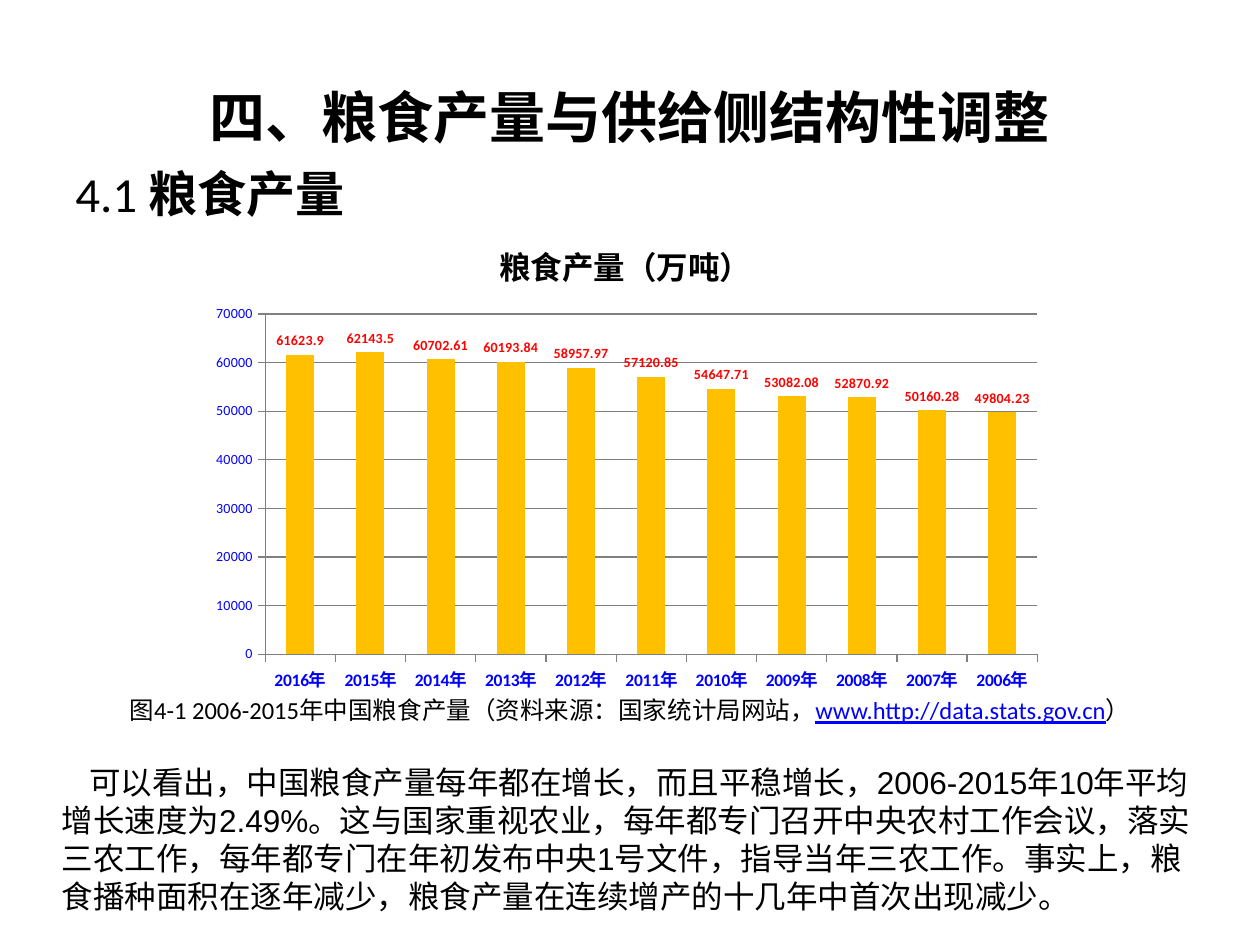
from dataclasses import dataclass

from lxml import etree
from pptx import Presentation
from pptx import util as u
from pptx.chart import data as cd
from pptx.dml.color import RGBColor
from pptx.enum import chart as ce, text as te
from pptx.oxml import ns

In = u.Inches


@dataclass(frozen=True)
class Theme:
    ink: str = "000000"
    blue: str = "0000FF"
    red: str = "FF0000"
    gold: str = "FFC000"
    grey: str = "808080"
    font: str = "Calibri"
    prose: str = "Arial"
    title: int = 32
    head: int = 28
    body: int = 18
    note: int = 14
    axis: int = 10
    small: int = 8


T = Theme()
NAME = "粮食产量（万吨）"
YEARS = [f"{year}年" for year in range(2016, 2005, -1)]
YIELDS = [61623.9, 62143.5, 60702.61, 60193.84, 58957.97, 57120.85,
          54647.71, 53082.08, 52870.92, 50160.28, 49804.23]
PROSE = ("可以看出，中国粮食产量每年都在增长，而且平稳增长，2006-2015年10年平均增长速度为2.49%。"
         "这与国家重视农业，每年都专门召开中央农村工作会议，落实三农工作，"
         "每年都专门在年初发布中央1号文件，指导当年三农工作。"
         "事实上，粮食播种面积在逐年减少，粮食产量在连续增产的十几年中首次出现减少。")


def style(font, size, color=T.ink, **form):
    form = {"name": T.font, "size": u.Pt(size), "bold": False, **form}
    for key, val in form.items():
        setattr(font, key, val)
    font.color.rgb = RGBColor.from_string(color)


def write(para, words, size, color=T.ink, **form):
    run = para.add_run()
    run.text = words
    style(run.font, size, color, **form)


def place(shape, box):
    for key, val in zip(("left", "top", "width", "height"), box):
        setattr(shape, key, In(val))


def add_text(slide, box):
    frame = slide.shapes.add_textbox(*map(In, box)).text_frame
    frame.word_wrap = True
    return frame


def add_title(slide, box):
    title = slide.shapes.title
    place(title, box)
    title.text_frame.vertical_anchor = te.MSO_ANCHOR.MIDDLE
    para = title.text_frame.paragraphs[0]
    para.alignment = te.PP_ALIGN.CENTER
    write(para, "四、粮食产量与供给侧结构性调整", T.title, bold=True)


def add_head(slide, box):
    para = add_text(slide, box).paragraphs[0]
    write(para, "4.1 ", T.head)
    write(para, "粮食产量", T.head, bold=True)


def rule(line):
    line.width = u.Pt(0.75)
    line.color.rgb = RGBColor.from_string(T.grey)


def set_plot(chart, box):
    # Fix the inner plot area as fractions of the chart
    area = chart.plots[0]._element.getparent()
    for old in area.findall(ns.qn("c:layout")):
        area.remove(old)
    layout = etree.Element(ns.qn("c:layout"))
    area.insert(0, layout)
    manual = etree.SubElement(layout, ns.qn("c:manualLayout"))
    parts = [("layoutTarget", "inner"), ("xMode", "edge"), ("yMode", "edge")]
    for tag, val in parts + list(zip("xywh", box)):
        etree.SubElement(manual, ns.qn(f"c:{tag}")).set("val", str(val))


def add_graph(slide, box):
    data = cd.CategoryChartData()
    data.categories = YEARS
    data.add_series(NAME, YIELDS)
    kind = ce.XL_CHART_TYPE.COLUMN_CLUSTERED
    chart = slide.shapes.add_chart(kind, *map(In, box), data).chart
    style(chart.font, T.axis)
    chart.has_legend = False
    chart.has_title = True
    write(chart.chart_title.text_frame.paragraphs[0], NAME, T.body, bold=True)
    set_plot(chart, (0.08, 0.2, 0.9, 0.7))

    # Axes and grid
    cat, val = chart.category_axis, chart.value_axis
    for axis, size, bold in ((cat, T.axis, True), (val, T.small, False)):
        style(axis.tick_labels.font, size, T.blue, bold=bold)
        axis.major_tick_mark = ce.XL_TICK_MARK.OUTSIDE
        rule(axis.format.line)
    val.minimum_scale, val.maximum_scale, val.major_unit = 0, 70000, 10000
    rule(val.major_gridlines.format.line)

    # Columns and their values
    plot = chart.plots[0]
    plot.gap_width = 150
    plot.vary_by_categories = False
    bars = plot.series[0]
    bars.format.fill.solid()
    bars.format.fill.fore_color.rgb = RGBColor.from_string(T.gold)
    labels = bars.data_labels
    labels.show_value = True
    labels.position = ce.XL_LABEL_POSITION.OUTSIDE_END
    style(labels.font, T.small, T.red, bold=True)


def add_notes(slide, box):
    frame = add_text(slide, box)
    # Caption with its source
    para = frame.paragraphs[0]
    para.alignment = te.PP_ALIGN.CENTER
    write(para, "图4-1 2006-2015年中国粮食产量（资料来源：国家统计局网站，", T.note)
    write(para, "www.http://data.stats.gov.cn", T.note, T.blue, underline=True)
    write(para, "）", T.note)
    # Discussion, first line indented
    para = frame.add_paragraph()
    para.space_before = u.Pt(22)
    para._p.get_or_add_pPr().set("indent", str(In(0.22)))
    write(para, PROSE, T.body, name=T.prose)


def main():
    deck = Presentation()
    deck.slide_width, deck.slide_height = In(10), In(7.5)
    slide = deck.slides.add_slide(deck.slide_layouts[5])
    add_title(slide, (0.5, 0.3, 9, 1.25))
    add_head(slide, (0.5, 1.25, 9, 0.6))
    add_graph(slide, (1.56, 1.72, 6.81, 3.86))
    add_notes(slide, (0.39, 5.47, 9.22, 2.14))
    deck.save("out.pptx")


if __name__ == "__main__":
    main()
